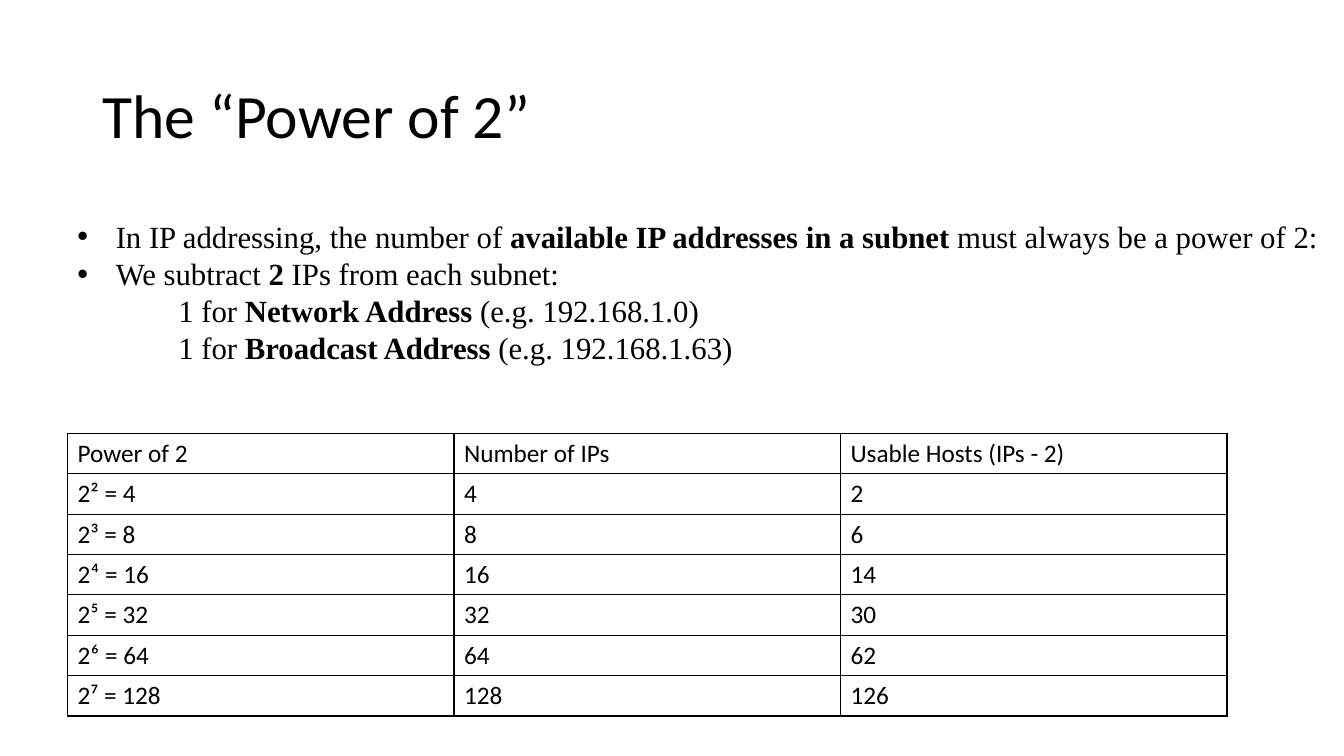
from pptx import Presentation
from pptx.dml.color import RGBColor
from pptx.enum.text import MSO_ANCHOR as Anchor
from pptx.oxml import parse_xml
from pptx.oxml.ns import nsdecls
from pptx.util import Inches, Pt

BLACK = RGBColor(0x00, 0x00, 0x00)
SANS = "Calibri"
SERIF = "Times New Roman"
HEADERS = ["Power of 2", "Number of IPs", "Usable Hosts (IPs - 2)"]
EXPONENTS = {2: "²", 3: "³", 4: "⁴", 5: "⁵", 6: "⁶", 7: "⁷"}
BULLETS = [
    [("In IP addressing, the number of ", False),
     ("available IP addresses in a subnet", True),
     (" must always be a power of 2:", False)],
    [("We subtract ", False), ("2", True), (" IPs from each subnet:", False)],
]
RESERVED = [
    [("1 for ", False), ("Network Address", True), (" (e.g. 192.168.1.0)", False)],
    [("1 for ", False), ("Broadcast Address", True), (" (e.g. 192.168.1.63)", False)],
]


def add_run(p, text, font, size, bold=False):
    r = p.add_run()
    r.text = text
    r.font.name = font
    r.font.size = Pt(size)
    r.font.bold = bold
    r.font.color.rgb = BLACK


def add_box(s, left, top, width, height, anchor):
    tf = s.shapes.add_textbox(Inches(left), Inches(top), Inches(width), Inches(height)).text_frame
    tf.word_wrap = True
    tf.vertical_anchor = anchor
    return tf


def set_indent(p, left, first=0, bullet=None):
    pPr = p._p.get_or_add_pPr()
    pPr.set("marL", str(Inches(left)))
    pPr.set("indent", str(Inches(first)))
    if bullet:
        pPr.append(parse_xml(f'<a:buFont {nsdecls("a")} typeface="Arial"/>'))
        pPr.append(parse_xml(f'<a:buChar {nsdecls("a")} char="{bullet}"/>'))


def add_body(s):
    tf = add_box(s, 0.67, 2.11, 13, 2.32, Anchor.TOP)
    for i, runs in enumerate(BULLETS + RESERVED):
        p = tf.add_paragraph() if i else tf.paragraphs[0]
        p.line_spacing = Pt(26.5)
        if i < len(BULLETS):
            set_indent(p, 0.38, -0.38, "•")
        else:
            set_indent(p, 1)
        for text, bold in runs:
            add_run(p, text, SERIF, 22, bold)


def add_borders(cell):
    tcPr = cell._tc.get_or_add_tcPr()
    for i, side in enumerate(("lnL", "lnR", "lnT", "lnB")):
        tcPr.insert(i, parse_xml(
            f'<a:{side} {nsdecls("a")} w="{Pt(1)}"><a:solidFill>'
            f'<a:srgbClr val="{BLACK}"/></a:solidFill></a:{side}>'))


def add_power_table(s):
    rows = [HEADERS]
    for n, sup in EXPONENTS.items():
        ips = 2 ** n
        rows.append([f"2{sup} = {ips}", str(ips), str(ips - 2)])
    table = s.shapes.add_table(len(rows), len(HEADERS), Inches(0.67), Inches(4.3),
                               Inches(11.5), Inches(0.4 * len(rows))).table
    table.first_row = False
    table.horz_banding = False
    for i, row in enumerate(rows):
        for j, text in enumerate(row):
            cell = table.cell(i, j)
            cell.fill.background()
            cell.vertical_anchor = Anchor.MIDDLE
            add_borders(cell)
            add_run(cell.text_frame.paragraphs[0], text, SANS, 18)


def main():
    prs = Presentation()
    prs.slide_width = Inches(13.33)
    prs.slide_height = Inches(7.5)
    s = prs.slides.add_slide(prs.slide_layouts[6])
    title = add_box(s, 0.92, 0.4, 11.5, 1.45, Anchor.MIDDLE)
    add_run(title.paragraphs[0], "The “Power of 2”", SANS, 44)
    add_power_table(s)
    add_body(s)
    prs.save("out.pptx")


if __name__ == "__main__":
    main()
